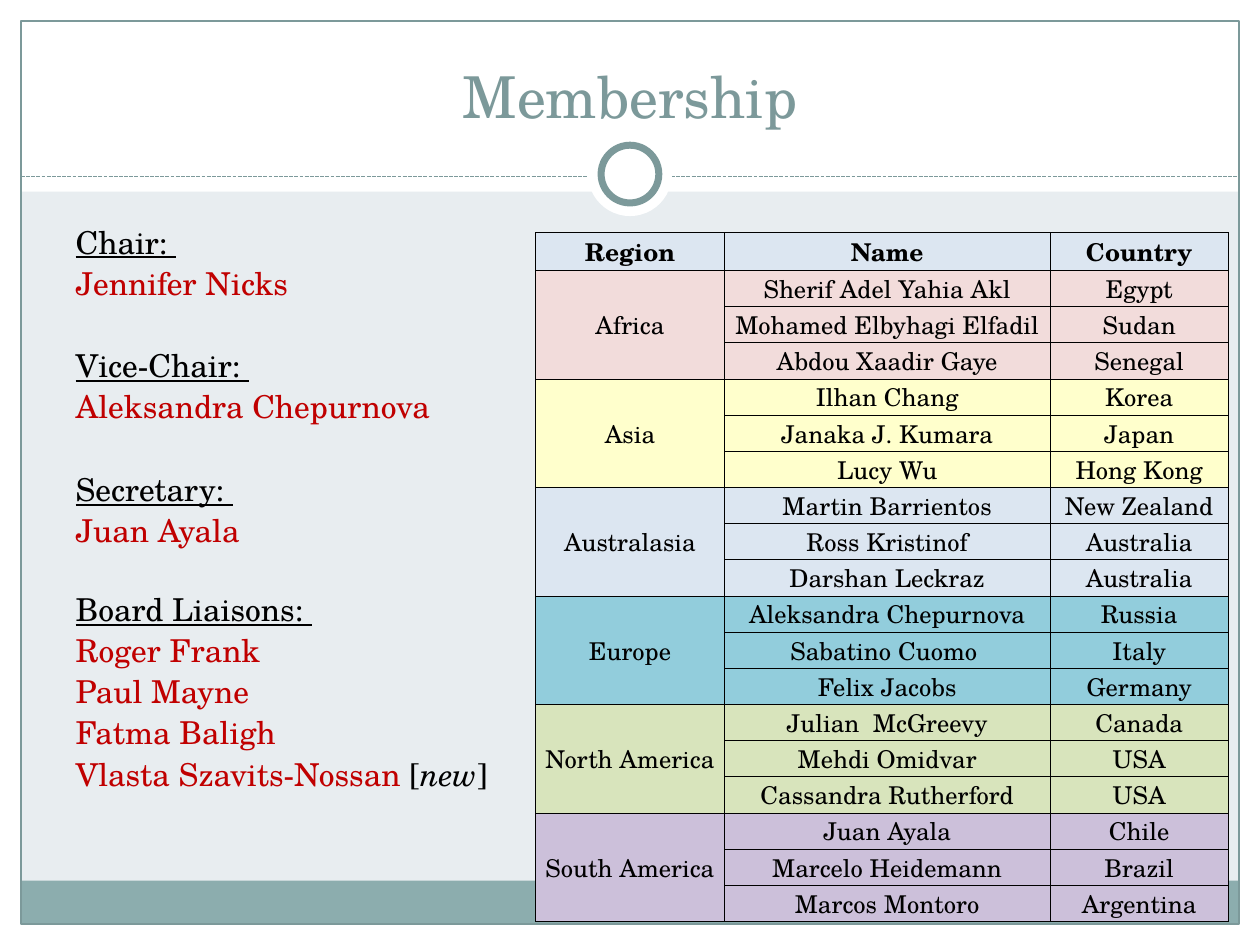
from lxml import etree
from pptx import Presentation
from pptx.dml.color import RGBColor
from pptx.enum.dml import MSO_LINE
from pptx.enum.shapes import MSO_CONNECTOR, MSO_SHAPE
from pptx.enum.text import MSO_ANCHOR, MSO_AUTO_SIZE, PP_ALIGN
from pptx.oxml.ns import qn
from pptx.util import Pt

RECT, OVAL = MSO_SHAPE.RECTANGLE, MSO_SHAPE.OVAL
STRAIGHT, DASH = MSO_CONNECTOR.STRAIGHT, MSO_LINE.SQUARE_DOT
MIDDLE, BOTTOM = MSO_ANCHOR.MIDDLE, MSO_ANCHOR.BOTTOM
LEFT, CENTER = PP_ALIGN.LEFT, PP_ALIGN.CENTER
NO_FIT = MSO_AUTO_SIZE.NONE

FONT = "TeX Gyre Schola"
COLORS = {
    "background": "E8EDF0", "white": "FFFFFF", "teal": "7C999A", "footer": "8CADAE",
    "black": "000000", "red": "C00000", "header": "DCE6F1",
}
TITLE = "Membership"
OFFICERS = [
    ("Chair: ", 4.1, ["Jennifer Nicks"]),
    ("Vice-Chair: ", 27.7, ["Aleksandra Chepurnova"]),
    ("Secretary: ", 27.7, ["Juan Ayala"]),
    ("Board Liaisons: ", 25.6,
     ["Roger Frank", "Paul Mayne", "Fatma Baligh", "Vlasta Szavits-Nossan "]),
]
NEW_MARK = [("[", False), ("new", True), ("]", False)]
HEADINGS = ["Region", "Name", "Country"]
REGIONS = [
    ("Africa", "F2DCDB", [("Sherif Adel Yahia Akl", "Egypt"),
                          ("Mohamed Elbyhagi Elfadil", "Sudan"),
                          ("Abdou Xaadir Gaye", "Senegal")]),
    ("Asia", "FFFFCC", [("Ilhan Chang", "Korea"),
                        ("Janaka J. Kumara", "Japan"),
                        ("Lucy Wu", "Hong Kong")]),
    ("Australasia", "DCE6F1", [("Martin Barrientos", "New Zealand"),
                               ("Ross Kristinof", "Australia"),
                               ("Darshan Leckraz", "Australia")]),
    ("Europe", "92CDDC", [("Aleksandra Chepurnova", "Russia"),
                          ("Sabatino Cuomo ", "Italy"),
                          ("Felix Jacobs", "Germany")]),
    ("North America", "D8E4BC", [("Julian  McGreevy", "Canada"),
                                 ("Mehdi Omidvar", "USA"),
                                 ("Cassandra Rutherford", "USA")]),
    ("South America", "CCC0DA", [("Juan Ayala", "Chile"),
                                 ("Marcelo Heidemann", "Brazil"),
                                 ("Marcos Montoro", "Argentina")]),
]
WIDTH, HEIGHT, MARGIN = 720, 540, 12
BACKDROP = [
    (RECT, (0, HEIGHT - MARGIN, WIDTH, MARGIN), "white", None),
    (RECT, (0, 0, WIDTH, 109.5), "white", None),
    (RECT, (0, 0, MARGIN, HEIGHT), "white", None),
    (RECT, (WIDTH - MARGIN, 0, MARGIN, HEIGHT), "white", None),
    (RECT, (MARGIN, 503.3, WIDTH - 2 * MARGIN, 24.5), "footer", None),
    (RECT, (MARGIN, MARGIN, WIDTH - 2 * MARGIN, HEIGHT - 2 * MARGIN), None, 0.75),
]
MEDALLION = [
    (OVAL, (336, 75.5, 48, 48), "white", None),
    (OVAL, (343.5, 83, 33, 33), "white", 4),
]
DIVIDER_Y = 100.8
COLUMN_WIDTHS = [108, 186, 102]
HEADER_HEIGHT, ROW_HEIGHT = 21.4, 20.64


def rgb(value):
    return RGBColor.from_string(value)


def set_font(font, size, color, bold=False):
    font.name, font.size, font.bold = FONT, Pt(size), bold
    font.color.rgb = rgb(color)


def place(shape, left, top, width, height):
    shape.left, shape.top = Pt(left), Pt(top)
    shape.width, shape.height = Pt(width), Pt(height)


def add_decoration(slide, kind, box, fill, line_width):
    shape = slide.shapes.add_shape(kind, *map(Pt, box))
    shape.shadow.inherit = False
    if fill:
        shape.fill.solid()
        shape.fill.fore_color.rgb = rgb(COLORS[fill])
    else:
        shape.fill.background()
    if line_width:
        shape.line.color.rgb = rgb(COLORS["teal"])
        shape.line.width = Pt(line_width)
    else:
        shape.line.fill.background()


def add_divider(slide):
    divider = slide.shapes.add_connector(
        STRAIGHT, Pt(MARGIN), Pt(DIVIDER_Y), Pt(WIDTH - MARGIN), Pt(DIVIDER_Y))
    divider.line.color.rgb = rgb(COLORS["teal"])
    divider.line.width = Pt(0.75)
    divider.line.dash_style = DASH
    etree.SubElement(divider._element.spPr, qn("a:effectLst"))


def style_cell(cell, text, fill, anchor, bold=False):
    cell.margin_left = cell.margin_right = cell.margin_top = cell.margin_bottom = 0
    cell.vertical_anchor = anchor
    cell.text = text
    paragraph = cell.text_frame.paragraphs[0]
    paragraph.alignment = CENTER
    set_font(paragraph.font, 14, COLORS["black"], bold)
    properties = cell._tc.get_or_add_tcPr()
    for side in ("lnL", "lnR", "lnT", "lnB"):
        border = etree.SubElement(properties, qn(f"a:{side}"), w=str(Pt(0.5)))
        solid = etree.SubElement(border, qn("a:solidFill"))
        etree.SubElement(solid, qn("a:srgbClr"), val=COLORS["black"])
    cell.fill.solid()
    cell.fill.fore_color.rgb = rgb(fill)


def add_members(slide):
    row_count = 1 + sum(len(members) for _, _, members in REGIONS)
    height = HEADER_HEIGHT + (row_count - 1) * ROW_HEIGHT
    table = slide.shapes.add_table(
        row_count, len(HEADINGS), Pt(306), Pt(132.8), Pt(sum(COLUMN_WIDTHS)), Pt(height)).table
    table.first_row = table.horz_banding = False
    for column, width in zip(table.columns, COLUMN_WIDTHS):
        column.width = Pt(width)
    for index, row in enumerate(table.rows):
        row.height = Pt(ROW_HEIGHT if index else HEADER_HEIGHT)
    for column, heading in enumerate(HEADINGS):
        style_cell(table.cell(0, column), heading, COLORS["header"], BOTTOM, True)
    first = 1
    for region, fill, members in REGIONS:
        for offset, (name, country) in enumerate(members):
            row = first + offset
            anchor = MIDDLE if row < 9 or row == 17 else BOTTOM
            style_cell(table.cell(row, 0), "" if offset else region, fill, MIDDLE)
            style_cell(table.cell(row, 1), name, fill, anchor)
            style_cell(table.cell(row, 2), country, fill, anchor)
        last = first + len(members) - 1
        table.cell(first, 0).merge(table.cell(last, 0))
        first = last + 1


def fill_title(title):
    place(title, 24, 18, 672, 60)
    title.text_frame.text = TITLE
    title.text_frame.auto_size = NO_FIT
    title.text_frame.vertical_anchor = BOTTOM
    paragraph = title.text_frame.paragraphs[0]
    paragraph.alignment = CENTER
    set_font(paragraph.font, 33, COLORS["teal"])


def fill_officers(body):
    place(body, 36, 126, 678, 390)
    frame = body.text_frame
    frame.auto_size = NO_FIT
    lines = []
    for role, gap, names in OFFICERS:
        lines.append((role, gap, "black", True))
        lines += [(name, 4.1, "red", False) for name in names]
    for index, (text, gap, color, underline) in enumerate(lines):
        paragraph = frame.add_paragraph() if index else frame.paragraphs[0]
        paragraph.text = text
        paragraph.alignment = LEFT
        paragraph.line_spacing = 0.9
        paragraph.space_before = Pt(gap)
        set_font(paragraph.font, 18, COLORS[color])
        paragraph.font.underline = underline
        properties = paragraph._p.get_or_add_pPr()
        properties.set("marL", "0")
        properties.set("indent", "0")
        properties.insert_element_before(
            etree.Element(qn("a:buNone")), "a:tabLst", "a:defRPr", "a:extLst")
    for text, italic in NEW_MARK:
        run = paragraph.add_run()
        run.text = text
        run.font.italic = italic
        run.font.color.rgb = rgb(COLORS["black"])


def main():
    presentation = Presentation()
    presentation.slide_width, presentation.slide_height = Pt(WIDTH), Pt(HEIGHT)
    slide = presentation.slides.add_slide(presentation.slide_layouts[1])
    slide.background.fill.solid()
    slide.background.fill.fore_color.rgb = rgb(COLORS["background"])
    title, body = slide.placeholders
    for part in BACKDROP:
        add_decoration(slide, *part)
    add_divider(slide)
    for part in MEDALLION:
        add_decoration(slide, *part)
    slide.shapes._spTree.append(title._element)
    add_members(slide)
    slide.shapes._spTree.append(body._element)
    fill_title(title)
    fill_officers(body)
    presentation.save("out.pptx")


if __name__ == "__main__":
    main()
